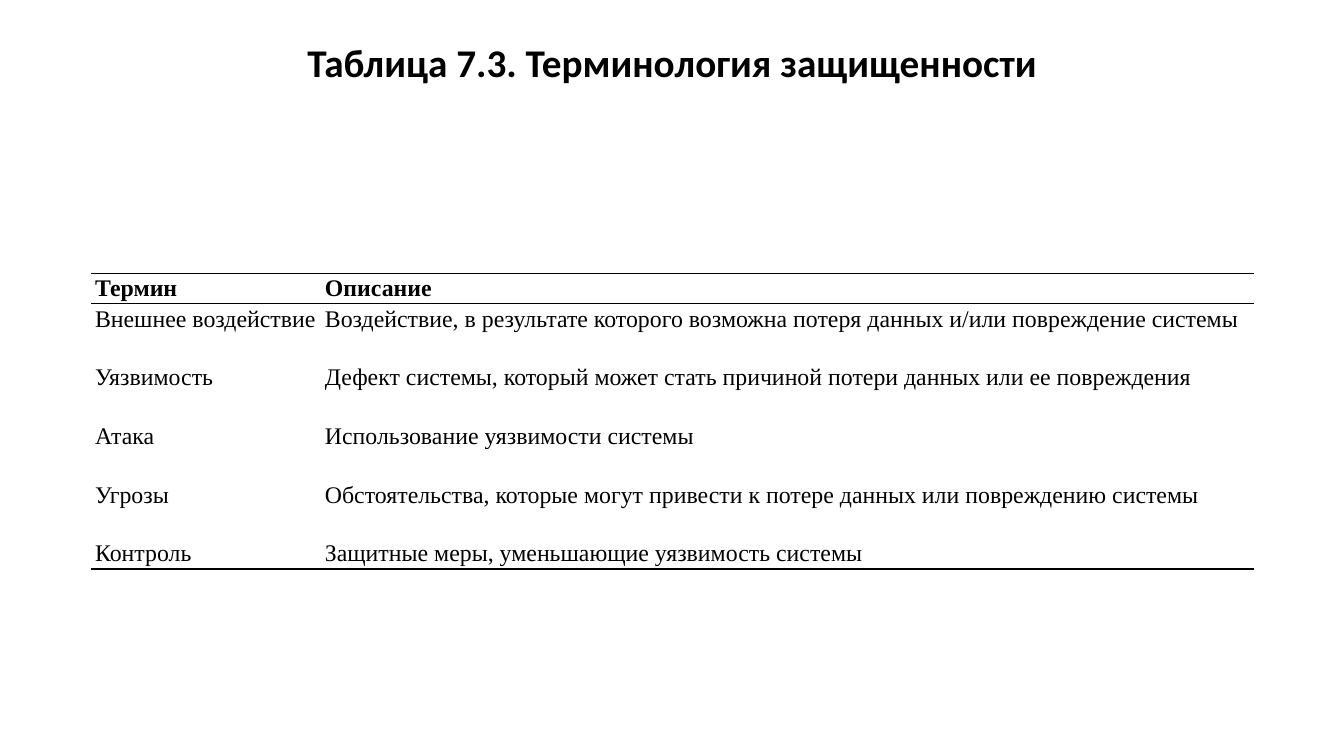
"""Builds a slide with a table of security terms."""
import pptx
import pptx.util
import pptx.dml.color
import pptx.enum.text
import pptx.oxml.ns
import lxml.etree

Pt = pptx.util.Pt
Align = pptx.enum.text.PP_ALIGN
BLACK = pptx.dml.color.RGBColor(0, 0, 0)
WHITE = pptx.dml.color.RGBColor(255, 255, 255)

TITLE = "Таблица 7.3. Терминология защищенности"
ROWS = [
    ("Термин", "Описание"),
    ("Внешнее воздействие", "Воздействие, в результате которого возможна потеря данных и/или повреждение системы"),
    ("Уязвимость", "Дефект системы, который может стать причиной потери данных или ее повреждения"),
    ("Атака", "Использование уязвимости системы"),
    ("Угрозы", "Обстоятельства, которые могут привести к потере данных или повреждению системы"),
    ("Контроль", "Защитные меры, уменьшающие уязвимость системы"),
]
COLS = (164.2, 666.4)
LEFT, TOP = 65, 195.2
SHORT, TALL = 20.9, 41.9
LAST = len(ROWS) - 1
RULES = {"T": (0, 1), "B": (0, LAST)}


def write(frame, text, font, size, bold, align, space):
    para = frame.paragraphs[0]
    para.alignment = align
    para.line_spacing = space
    run = para.add_run()
    run.text = text
    run.font.name = font
    run.font.size = Pt(size)
    run.font.bold = bold
    run.font.color.rgb = BLACK


def add(parent, tag, **attrs):
    return lxml.etree.SubElement(parent, pptx.oxml.ns.qn(tag), **attrs)


def border(cell, row):
    props = cell._tc.get_or_add_tcPr()
    for side in "LRTB":
        line = add(props, "a:ln" + side, w=str(Pt(1)))
        if row in RULES.get(side, ()):
            fill = add(line, "a:solidFill")
            add(fill, "a:srgbClr", val=str(BLACK))
        else:
            add(line, "a:noFill")


def fill_cell(cell, text, row):
    cell.margin_left = cell.margin_right = Pt(2.9)
    cell.margin_top = cell.margin_bottom = Pt(0)
    border(cell, row)
    cell.fill.solid()
    cell.fill.fore_color.rgb = WHITE
    write(cell.text_frame, text, "Times New Roman", 17, row == 0, Align.JUSTIFY, 1.07)


def main():
    deck = pptx.Presentation()
    deck.slide_width, deck.slide_height = Pt(960), Pt(540)
    slide = deck.slides.add_slide(deck.slide_layouts[6])

    title = slide.shapes.add_textbox(Pt(66), Pt(27.4), Pt(828), Pt(38)).text_frame
    title.word_wrap = True
    write(title, TITLE, "Calibri", 28, True, Align.CENTER, 0.9)

    highs = [SHORT if row in (0, LAST) else TALL for row in range(len(ROWS))]
    table = slide.shapes.add_table(
        len(ROWS), len(COLS), Pt(LEFT), Pt(TOP), Pt(sum(COLS)), Pt(sum(highs))
    ).table
    table.first_row = table.horz_banding = False
    for col, width in zip(table.columns, COLS):
        col.width = Pt(width)
    for row, (texts, high) in enumerate(zip(ROWS, highs)):
        table.rows[row].height = Pt(high)
        for col, text in enumerate(texts):
            fill_cell(table.cell(row, col), text, row)

    deck.save("out.pptx")


if __name__ == "__main__":
    main()
